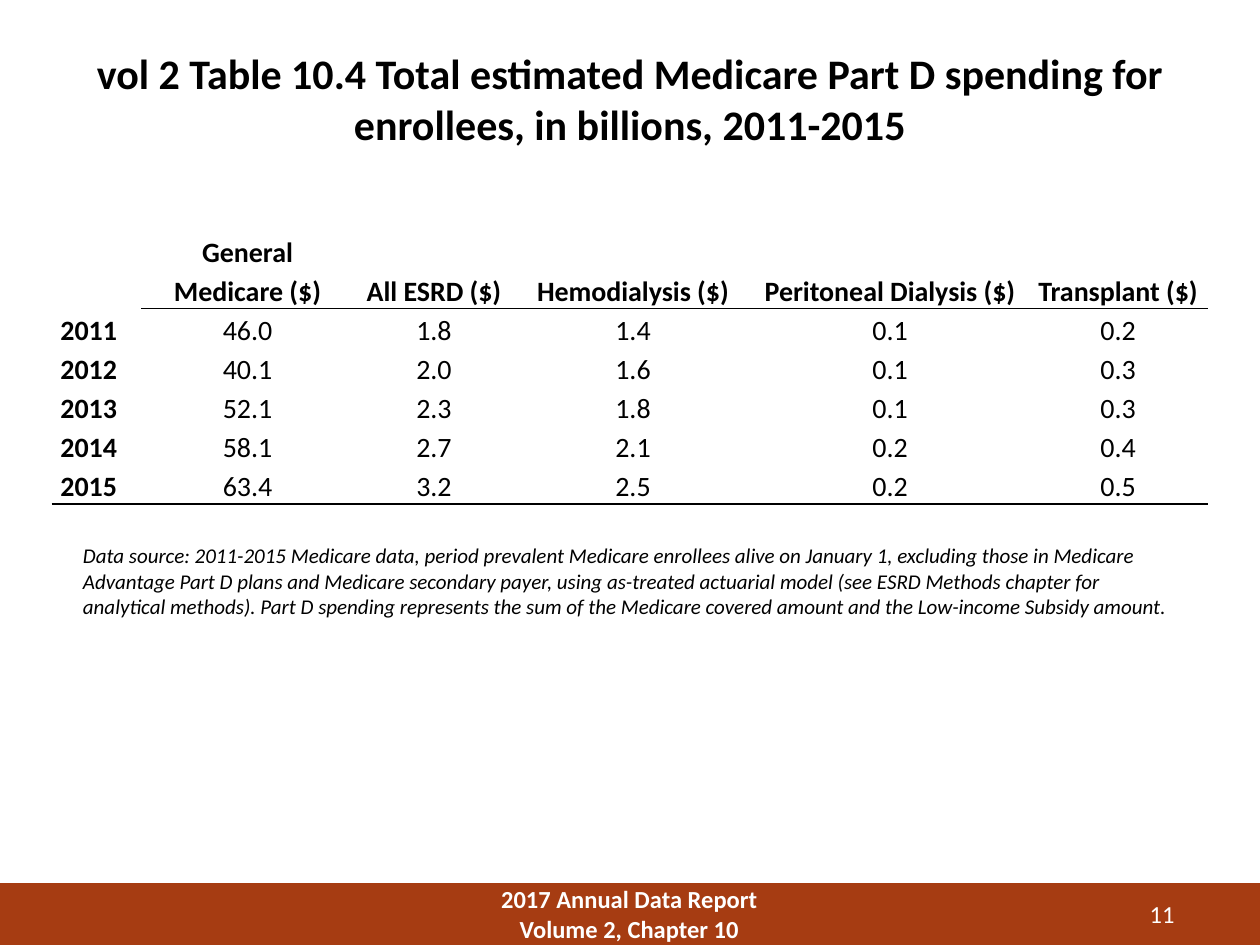
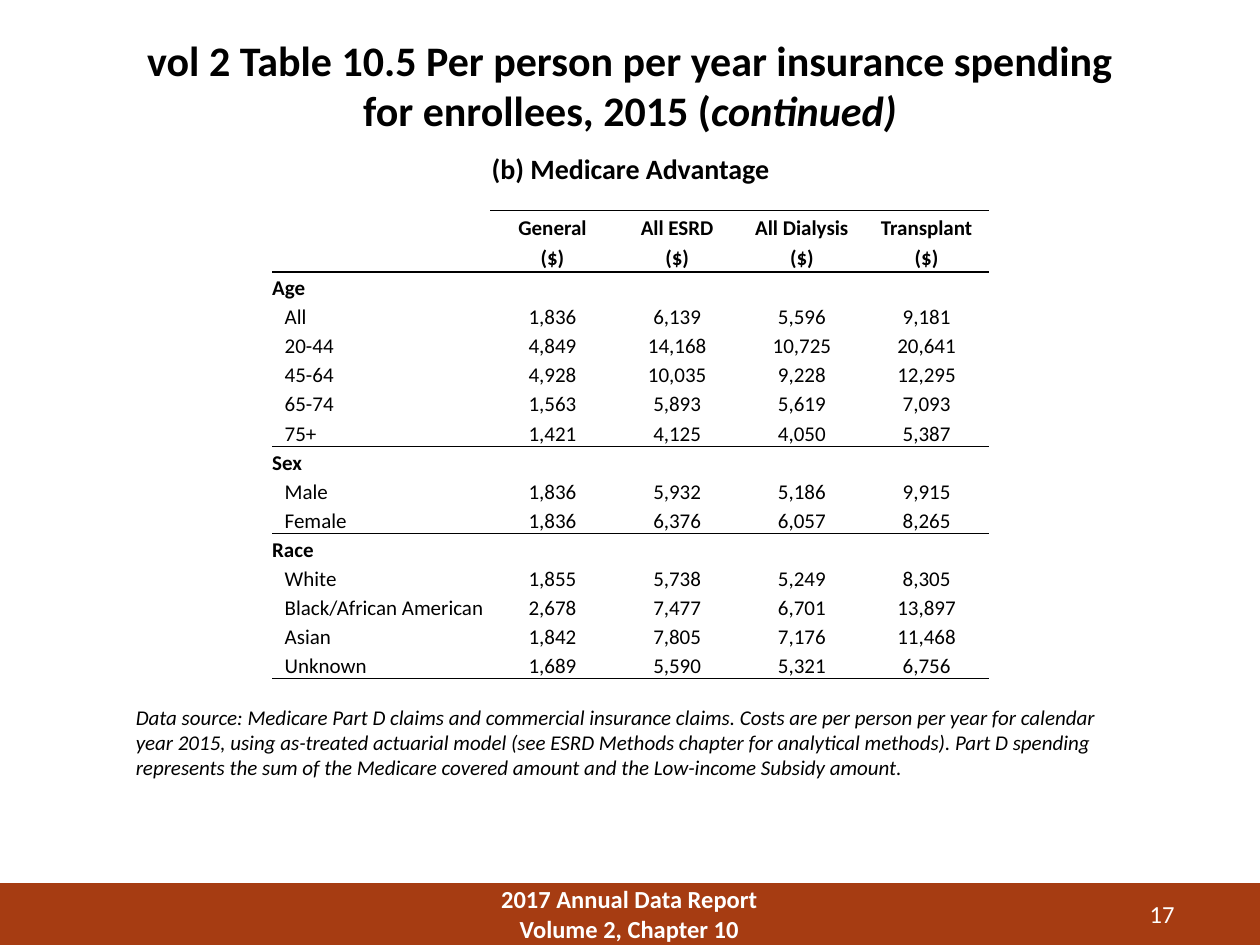
from lxml import etree
from pptx import Presentation
from pptx import util as u
from pptx.dml import color
from pptx.enum import shapes, text
from pptx.oxml import ns

FONT = "Calibri"
BLACK, WHITE, RUST = "000000", "FFFFFF", "A63C12"
PLAIN = "{2D5ABB26-0587-4C30-8999-92F81FD0307C}"
LEFT, MID, RIGHT = text.PP_ALIGN.LEFT, text.PP_ALIGN.CENTER, text.PP_ALIGN.RIGHT


def rgb(code):
    return color.RGBColor.from_string(code)


class Deck:
    def __init__(self):
        self.prs = Presentation()
        self.prs.slide_width = u.Inches(10)
        self.prs.slide_height = u.Inches(7.5)
        self.slide = None

    def start(self, number):
        self.slide = self.prs.slides.add_slide(self.prs.slide_layouts[5])
        band = self.slide.shapes.add_shape(
            shapes.MSO_SHAPE.RECTANGLE, *map(u.Inches, (0, 7.01, 10, 0.5)))
        band.shadow.inherit = False
        band.fill.solid()
        band.fill.fore_color.rgb = rgb(RUST)
        band.line.fill.background()
        self.label((3.58, 6.96, 2.83, 0.58), ["2017 Annual Data Report", "Volume 2, Chapter 10"],
                   14, MID, WHITE, bold=True, anchor=text.MSO_ANCHOR.MIDDLE)
        self.label((8.42, 7.08, 1, 0.35), [number], 14, RIGHT, WHITE,
                   anchor=text.MSO_ANCHOR.MIDDLE)

    def style(self, para, size, align, shade=BLACK, bold=False, italic=None):
        para.alignment = align
        font = para.font
        font.name, font.size = FONT, u.Pt(size)
        font.bold, font.italic = bold, italic
        font.color.rgb = rgb(shade)

    def title(self, at, *parts):
        box = self.slide.shapes.title
        box.left, box.top, box.width, box.height = map(u.Inches, at)
        frame = box.text_frame
        frame.auto_size = text.MSO_AUTO_SIZE.NONE
        frame.vertical_anchor = text.MSO_ANCHOR.TOP
        frame.margin_top = u.Inches(0.08)
        para = frame.paragraphs[0]
        self.style(para, 24, MID, bold=True)
        for words, slant in parts:
            run = para.add_run()
            run.text = words
            if slant:
                run.font.italic = True

    def label(self, at, lines, size, align=LEFT, shade=BLACK, bold=False,
              italic=None, anchor=text.MSO_ANCHOR.TOP):
        frame = self.slide.shapes.add_textbox(*map(u.Inches, at)).text_frame
        frame.word_wrap = True
        frame.vertical_anchor = anchor
        for i, line in enumerate(lines):
            para = frame.add_paragraph() if i else frame.paragraphs[0]
            para.text = line
            self.style(para, size, align, shade, bold, italic)

    def table(self, left, top, widths, head, step, rows, size, pad):
        high = head + step * (len(rows) - 1)
        at = map(u.Inches, (left, top, sum(widths), high))
        grid = self.slide.shapes.add_table(len(rows), len(widths), *at).table
        grid.first_row = grid.horz_banding = False
        grid._tbl.tblPr.find(ns.qn("a:tableStyleId")).text = PLAIN
        for col, width in zip(grid.columns, widths):
            col.width = u.Inches(width)
        for r, row in enumerate(rows):
            grid.rows[r].height = u.Inches(step if r else head)
            for c in range(len(widths)):
                words = row[c] if c < len(row) else ""
                bold = r == 0 or (c == 0 and (pad > 0 or len(row) == 1))
                self.cell(grid.cell(r, c), words, size, MID if c else LEFT, bold, pad)
        return grid

    def cell(self, cell, words, size, align, bold, pad):
        cell.fill.background()
        cell.vertical_anchor = text.MSO_ANCHOR.MIDDLE
        cell.margin_left = cell.margin_right = u.Inches(pad)
        cell.margin_top = cell.margin_bottom = 0
        para = cell.text_frame.paragraphs[0]
        para.text = words
        para.line_spacing = 1.15
        self.style(para, size, align, bold=bold)
        if not words:
            para._p.get_or_add_endParaRPr().set("sz", str(size * 100))

    def rule(self, grid, row, side="B", start=0):
        for c in range(start, len(grid.columns)):
            props = grid.cell(row, c)._tc.get_or_add_tcPr()
            line = etree.Element(ns.qn("a:ln" + side), w=str(u.Pt(1)))
            fill = etree.SubElement(line, ns.qn("a:solidFill"))
            etree.SubElement(fill, ns.qn("a:srgbClr"), val=BLACK)
            props.insert(len(props) - 1, line)


def total(deck):
    deck.start("11")
    deck.title((0, 0.3, 10, 1.25), (
        "vol 2 Table 10.4 Total estimated Medicare Part D spending for "
        "enrollees, in billions, 2011-2015", False))
    rows = [
        ("", "General Medicare ($)", "All ESRD ($)", "Hemodialysis ($)",
         "Peritoneal Dialysis ($)", "Transplant ($)"),
        ("2011", "46.0", "1.8", "1.4", "0.1", "0.2"),
        ("2012", "40.1", "2.0", "1.6", "0.1", "0.3"),
        ("2013", "52.1", "2.3", "1.8", "0.1", "0.3"),
        ("2014", "58.1", "2.7", "2.1", "0.2", "0.4"),
        ("2015", "63.4", "3.2", "2.5", "0.2", "0.5"),
    ]
    widths = (0.71, 1.69, 1.27, 1.89, 2.19, 1.43)
    grid = deck.table(0.41, 1.83, widths, 0.62, 0.31, rows, 16, 0.07)
    for c in range(len(widths)):
        grid.cell(0, c).vertical_anchor = text.MSO_ANCHOR.BOTTOM
    deck.rule(grid, 0, start=1)
    deck.rule(grid, len(rows) - 1)
    deck.label((0.56, 4.26, 8.88, 0.71), [
        "Data source: 2011-2015 Medicare data, period prevalent Medicare enrollees alive on "
        "January 1, excluding those in Medicare Advantage Part D plans and Medicare secondary "
        "payer, using as-treated actuarial model (see ESRD Methods chapter for analytical "
        "methods). Part D spending represents the sum of the Medicare covered amount and the "
        "Low-income Subsidy amount."], 12, italic=True)


def person(deck):
    deck.start("17")
    deck.title((0.92, 0.19, 8.16, 0.96), (
        "vol 2 Table 10.5 Per person per year insurance spending for enrollees, 2015 (", False),
        ("continued)", True))
    rows = [
        ("", "General\n($)", "All ESRD\n($)", "All Dialysis\n($)", "Transplant\n($)"),
        ("Age",),
        ("All", "1,836", "6,139", "5,596", "9,181"),
        ("20-44", "4,849", "14,168", "10,725", "20,641"),
        ("45-64", "4,928", "10,035", "9,228", "12,295"),
        ("65-74", "1,563", "5,893", "5,619", "7,093"),
        ("75+", "1,421", "4,125", "4,050", "5,387"),
        ("Sex",),
        ("Male", "1,836", "5,932", "5,186", "9,915"),
        ("Female", "1,836", "6,376", "6,057", "8,265"),
        ("Race",),
        ("White", "1,855", "5,738", "5,249", "8,305"),
        ("Black/African American", "2,678", "7,477", "6,701", "13,897"),
        ("Asian", "1,842", "7,805", "7,176", "11,468"),
        ("Unknown", "1,689", "5,590", "5,321", "6,756"),
    ]
    widths = [1.73] + [0.99] * 4
    grid = deck.table(2.16, 1.67, widths, 0.49, 0.23, rows, 12, 0)
    deck.rule(grid, 0, "T", start=1)
    for r, row in enumerate(rows):
        if len(row) > 1:
            grid.cell(r, 0).margin_left = u.Inches(0.1)
        if r + 1 == len(rows) or len(rows[r + 1]) == 1:
            deck.rule(grid, r)
    deck.label((0.98, 5.54, 8.04, 0.71), [
        "Data source: Medicare Part D claims and commercial insurance claims. Costs are per "
        "person per year for calendar year 2015, using as-treated actuarial model (see ESRD "
        "Methods chapter for analytical methods). Part D spending represents the sum of the "
        "Medicare covered amount and the Low-income Subsidy amount."], 12, italic=True)
    deck.label((3.71, 1.15, 2.59, 0.37), ["(b) Medicare Advantage"], 16, MID, bold=True)


def main():
    deck = Deck()
    total(deck)
    person(deck)
    deck.prs.save("out.pptx")


if __name__ == "__main__":
    main()
